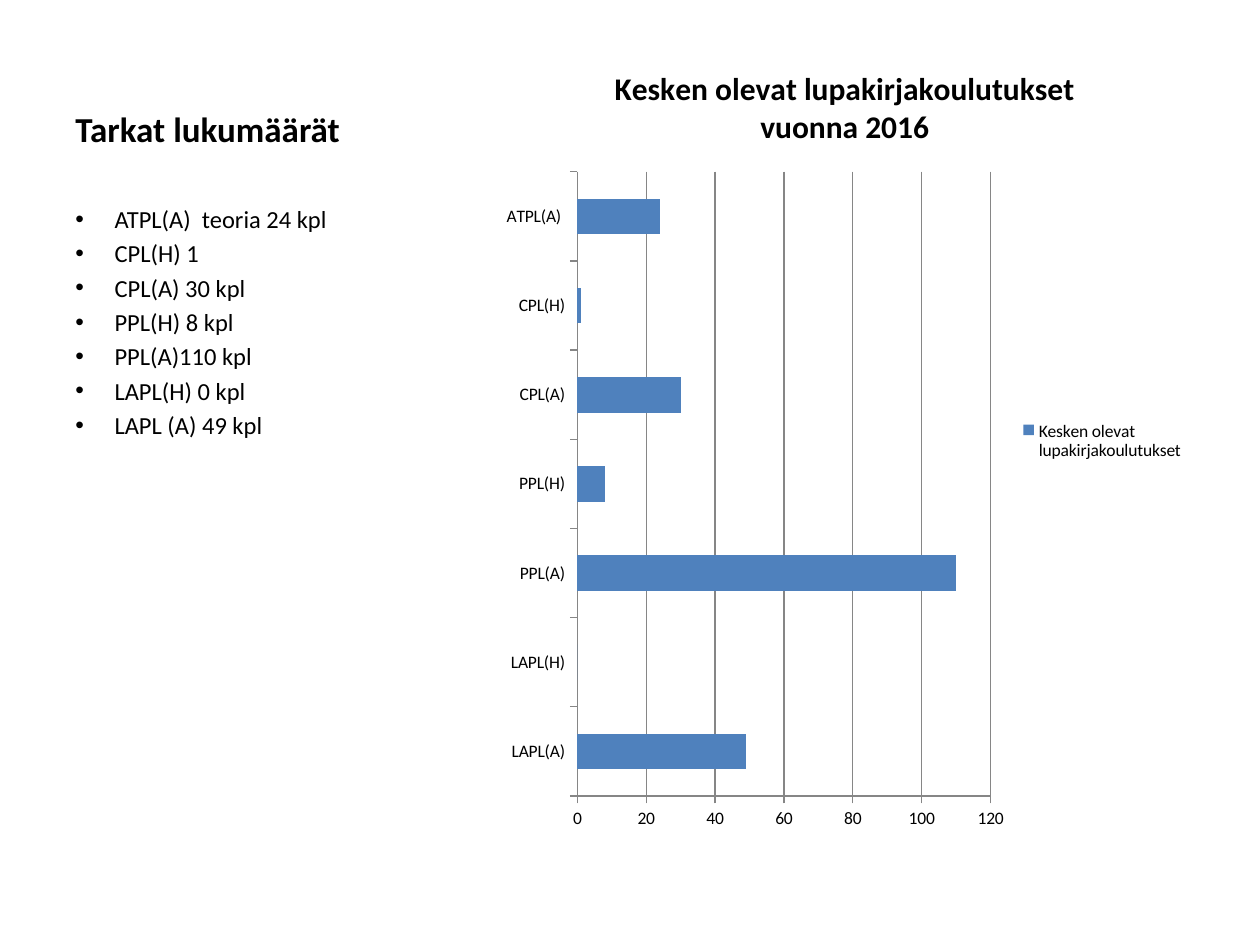
from lxml import etree
from pptx import Presentation
from pptx.chart.data import CategoryChartData
from pptx.dml.color import RGBColor
from pptx.enum.chart import XL_CHART_TYPE, XL_LEGEND_POSITION, XL_TICK_MARK
from pptx.enum.text import MSO_ANCHOR
from pptx.oxml.ns import qn
from pptx.util import Cm, Pt

BAR_CLUSTERED = XL_CHART_TYPE.BAR_CLUSTERED
LEGEND_RIGHT = XL_LEGEND_POSITION.RIGHT
TICK_OUTSIDE = XL_TICK_MARK.OUTSIDE
ANCHOR_TOP = MSO_ANCHOR.TOP
ANCHOR_BOTTOM = MSO_ANCHOR.BOTTOM

FONT = "Calibri"
BLACK = "000000"
BLUE = "4F81BD"
GREY = "868686"

HEADING = "Tarkat lukumäärät"
COUNTS = [
    "ATPL(A)  teoria 24 kpl",
    "CPL(H) 1",
    "CPL(A) 30 kpl",
    "PPL(H) 8 kpl",
    "PPL(A)110 kpl",
    "LAPL(H) 0 kpl",
    "LAPL (A) 49 kpl",
]
CHART_TITLE = "Kesken olevat lupakirjakoulutukset vuonna 2016"
SERIES_NAME = "Kesken olevat lupakirjakoulutukset"
TRAININGS = [
    ("LAPL(A)", 49),
    ("LAPL(H)", 0),
    ("PPL(A)", 110),
    ("PPL(H)", 8),
    ("CPL(A)", 30),
    ("CPL(H)", 1),
    ("ATPL(A) ", 24),
]

LEFT, TOP = 1.27, 0.76
COLUMN_WIDTH, HEADING_HEIGHT = 8.36, 3.23
CHART_LEFT, CHART_WIDTH, CONTENT_HEIGHT = 9.93, 14.2, 16.26
BULLET_INDENT = 0.79


def color(value):
    return RGBColor.from_string(value)


def style_font(font, size, bold=False):
    font.name = FONT
    font.size = Pt(size)
    font.bold = bold
    font.color.rgb = color(BLACK)


def add_text(slide, top, height, lines, size, bold=False, anchor=ANCHOR_TOP):
    box = slide.shapes.add_textbox(Cm(LEFT), Cm(top), Cm(COLUMN_WIDTH), Cm(height))
    frame = box.text_frame
    frame.word_wrap = True
    frame.vertical_anchor = anchor
    frame.text = "\n".join(lines)
    for paragraph in frame.paragraphs:
        for run in paragraph.runs:
            style_font(run.font, size, bold)
    return frame


def add_bullet(paragraph):
    properties = paragraph._p.get_or_add_pPr()
    properties.set("marL", str(Cm(BULLET_INDENT)))
    properties.set("indent", str(-Cm(BULLET_INDENT)))
    etree.SubElement(properties, qn("a:buFont")).set("typeface", "Arial")
    etree.SubElement(properties, qn("a:buChar")).set("char", "•")


def style_line(line):
    line.color.rgb = color(GREY)
    line.width = Pt(0.75)


def add_training_chart(slide):
    data = CategoryChartData()
    data.categories = [name for name, count in TRAININGS]
    data.add_series(SERIES_NAME, [count for name, count in TRAININGS])
    chart = slide.shapes.add_chart(
        BAR_CLUSTERED, Cm(CHART_LEFT), Cm(TOP), Cm(CHART_WIDTH), Cm(CONTENT_HEIGHT), data
    ).chart
    style_font(chart.font, 10)

    chart.has_title = True
    title = chart.chart_title
    title.include_in_layout = False
    title.text_frame.text = CHART_TITLE
    style_font(title.text_frame.paragraphs[0].runs[0].font, 18, True)

    chart.has_legend = True
    chart.legend.position = LEGEND_RIGHT
    chart.legend.include_in_layout = False

    plot = chart.plots[0]
    plot.gap_width = 150
    plot.vary_by_categories = False
    fill = plot.series[0].format.fill
    fill.solid()
    fill.fore_color.rgb = color(BLUE)

    for axis in (chart.category_axis, chart.value_axis):
        axis.major_tick_mark = TICK_OUTSIDE
        style_line(axis.format.line)
    chart.value_axis.has_major_gridlines = True
    style_line(chart.value_axis.major_gridlines.format.line)


def main():
    presentation = Presentation()
    presentation.slide_width = Cm(25.4)
    presentation.slide_height = Cm(19.05)
    slide = presentation.slides.add_slide(presentation.slide_layouts[6])

    heading = add_text(slide, TOP, HEADING_HEIGHT, [HEADING], 20, True, ANCHOR_BOTTOM)
    heading.margin_bottom = Cm(0.97)

    counts = add_text(
        slide, TOP + HEADING_HEIGHT, CONTENT_HEIGHT - HEADING_HEIGHT, COUNTS, 14
    )
    for paragraph in counts.paragraphs:
        paragraph.space_before = Pt(2.8)
        add_bullet(paragraph)

    add_training_chart(slide)
    presentation.save("out.pptx")


if __name__ == "__main__":
    main()
